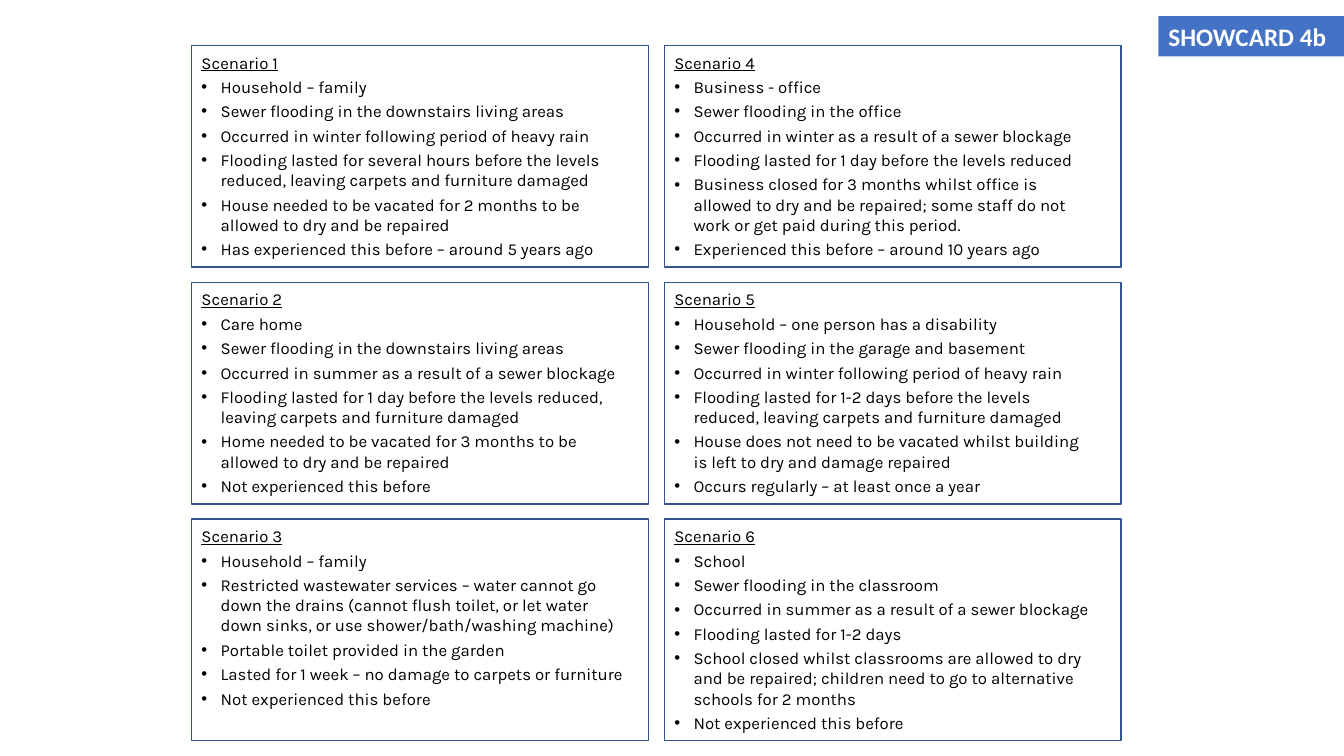
import pptx
import pptx.dml.color
import pptx.enum.shapes
import pptx.enum.text
import pptx.oxml
import pptx.oxml.ns
import pptx.util
from dataclasses import dataclass
from pptx.util import Inches


@dataclass(frozen=True)
class Theme:
    text: str = "000000"
    border: str = "325491"
    tag_fill: str = "4472C4"
    tag_text: str = "FFFFFF"
    body_font: str = "Karla"
    tag_font: str = "Calibri"
    bullet_font: str = "Arial"
    body_size: int = 12
    tag_size: int = 18
    border_width: int = 1
    space_before: int = 3
    indent: float = 0.19


def rgb(value):
    return pptx.dml.color.RGBColor.from_string(value)


class SlideBuilder:
    def __init__(self, s, theme):
        self.s = s
        self.theme = theme

    def rect(self, x, y, w, h, fill=None, line=None):
        sp = self.s.shapes.add_shape(
            pptx.enum.shapes.MSO_SHAPE.RECTANGLE,
            Inches(x), Inches(y), Inches(w), Inches(h))
        sp.shadow.inherit = False
        if fill:
            sp.fill.solid()
            sp.fill.fore_color.rgb = rgb(fill)
        else:
            sp.fill.background()
        if line:
            sp.line.color.rgb = rgb(line)
            sp.line.width = pptx.util.Pt(self.theme.border_width)
        else:
            sp.line.fill.background()
        return sp

    def run(self, p, text, font, size, color, bold=False, underline=False):
        r = p.add_run()
        r.text = text
        r.font.name = font
        r.font.size = pptx.util.Pt(size)
        r.font.color.rgb = rgb(color)
        r.font.bold = bold
        r.font.underline = underline

    def bullet(self, p):
        pPr = p._p.get_or_add_pPr()
        indent = Inches(self.theme.indent)
        pPr.set("marL", str(indent))
        pPr.set("indent", str(-indent))
        ns = pptx.oxml.ns.nsdecls("a")
        for xml in (f'<a:buFont {ns} typeface="{self.theme.bullet_font}"/>',
                    f'<a:buChar {ns} char="•"/>'):
            pPr.append(pptx.oxml.parse_xml(xml))

    def scenario_text(self, x, y, w, h, title, points):
        t = self.theme
        tf = self.s.shapes.add_textbox(
            Inches(x), Inches(y), Inches(w), Inches(h)).text_frame
        tf.word_wrap = True
        tf.auto_size = pptx.enum.text.MSO_AUTO_SIZE.SHAPE_TO_FIT_TEXT
        for i, text in enumerate([title, *points]):
            p = tf.add_paragraph() if i else tf.paragraphs[0]
            p.space_before = pptx.util.Pt(t.space_before)
            if i:
                self.bullet(p)
            self.run(p, text, t.body_font, t.body_size, t.text, underline=i == 0)

    def tag(self, x, y, w, h, text):
        t = self.theme
        tf = self.rect(x, y, w, h, fill=t.tag_fill).text_frame
        tf.word_wrap = False
        tf.auto_size = pptx.enum.text.MSO_AUTO_SIZE.SHAPE_TO_FIT_TEXT
        tf.vertical_anchor = pptx.enum.text.MSO_ANCHOR.TOP
        p = tf.paragraphs[0]
        p.alignment = pptx.enum.text.PP_ALIGN.LEFT
        self.run(p, text, t.tag_font, t.tag_size, t.tag_text, bold=True)


LIVING_AREAS = "Sewer flooding in the downstairs living areas"
WINTER_RAIN = "Occurred in winter following period of heavy rain"
SUMMER_BLOCKAGE = "Occurred in summer as a result of a sewer blockage"
FIRST_TIME = "Not experienced this before"

SCENARIOS = [
    ["Household – family",
     LIVING_AREAS,
     WINTER_RAIN,
     "Flooding lasted for several hours before the levels reduced, "
     "leaving carpets and furniture damaged",
     "House needed to be vacated for 2 months to be allowed to dry and be repaired",
     "Has experienced this before – around 5 years ago"],
    ["Care home",
     LIVING_AREAS,
     SUMMER_BLOCKAGE,
     "Flooding lasted for 1 day before the levels reduced, "
     "leaving carpets and furniture damaged",
     "Home needed to be vacated for 3 months to be allowed to dry and be repaired",
     FIRST_TIME],
    ["Household – family",
     "Restricted wastewater services – water cannot go down the drains "
     "(cannot flush toilet, or let water down sinks, or use shower/bath/washing machine)",
     "Portable toilet provided in the garden",
     "Lasted for 1 week – no damage to carpets or furniture",
     FIRST_TIME],
    ["Business - office",
     "Sewer flooding in the office",
     "Occurred in winter as a result of a sewer blockage",
     "Flooding lasted for 1 day before the levels reduced",
     "Business closed for 3 months whilst office is allowed to dry and be repaired; "
     "some staff do not work or get paid during this period.",
     "Experienced this before – around 10 years ago"],
    ["Household – one person has a disability",
     "Sewer flooding in the garage and basement",
     WINTER_RAIN,
     "Flooding lasted for 1-2 days before the levels reduced, "
     "leaving carpets and furniture damaged",
     "House does not need to be vacated whilst building is left to dry and damage repaired",
     "Occurs regularly – at least once a year"],
    ["School",
     "Sewer flooding in the classroom",
     SUMMER_BLOCKAGE,
     "Flooding lasted for 1-2 days",
     "School closed whilst classrooms are allowed to dry and be repaired; "
     "children need to go to alternative schools for 2 months",
     FIRST_TIME],
]

ROWS = 3
LEFT, TOP = 1.9, 0.45
CARD_W, CARD_H = 4.53, 2.2
GAP_X, GAP_Y = 0.16, 0.15
TEXT_W, TEXT_H, TEXT_DROP = 4.38, 2.17, 0.02


def main():
    prs = pptx.Presentation()
    prs.slide_width, prs.slide_height = Inches(13.33), Inches(7.5)
    theme = Theme()
    slide = SlideBuilder(prs.slides.add_slide(prs.slide_layouts[6]), theme)
    for i, points in enumerate(SCENARIOS):
        col, row = divmod(i, ROWS)
        x = LEFT + col * (CARD_W + GAP_X)
        y = TOP + row * (CARD_H + GAP_Y)
        slide.rect(x, y, CARD_W, CARD_H, line=theme.border)
        slide.scenario_text(x, y + TEXT_DROP, TEXT_W, TEXT_H, f"Scenario {i + 1}", points)
    slide.tag(11.49, 0.16, 1.84, 0.4, "SHOWCARD 4b")
    prs.save("out.pptx")


if __name__ == "__main__":
    main()
